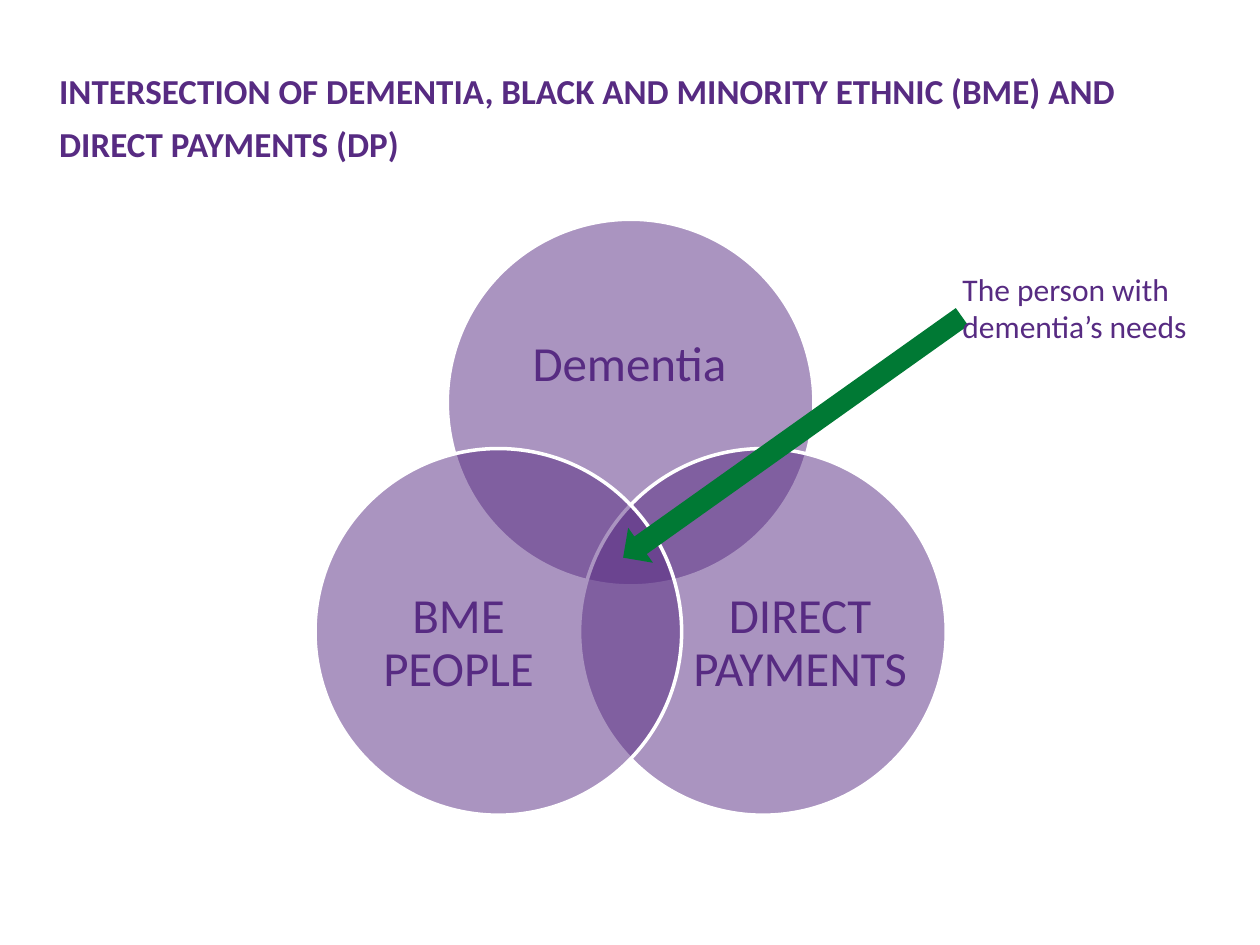
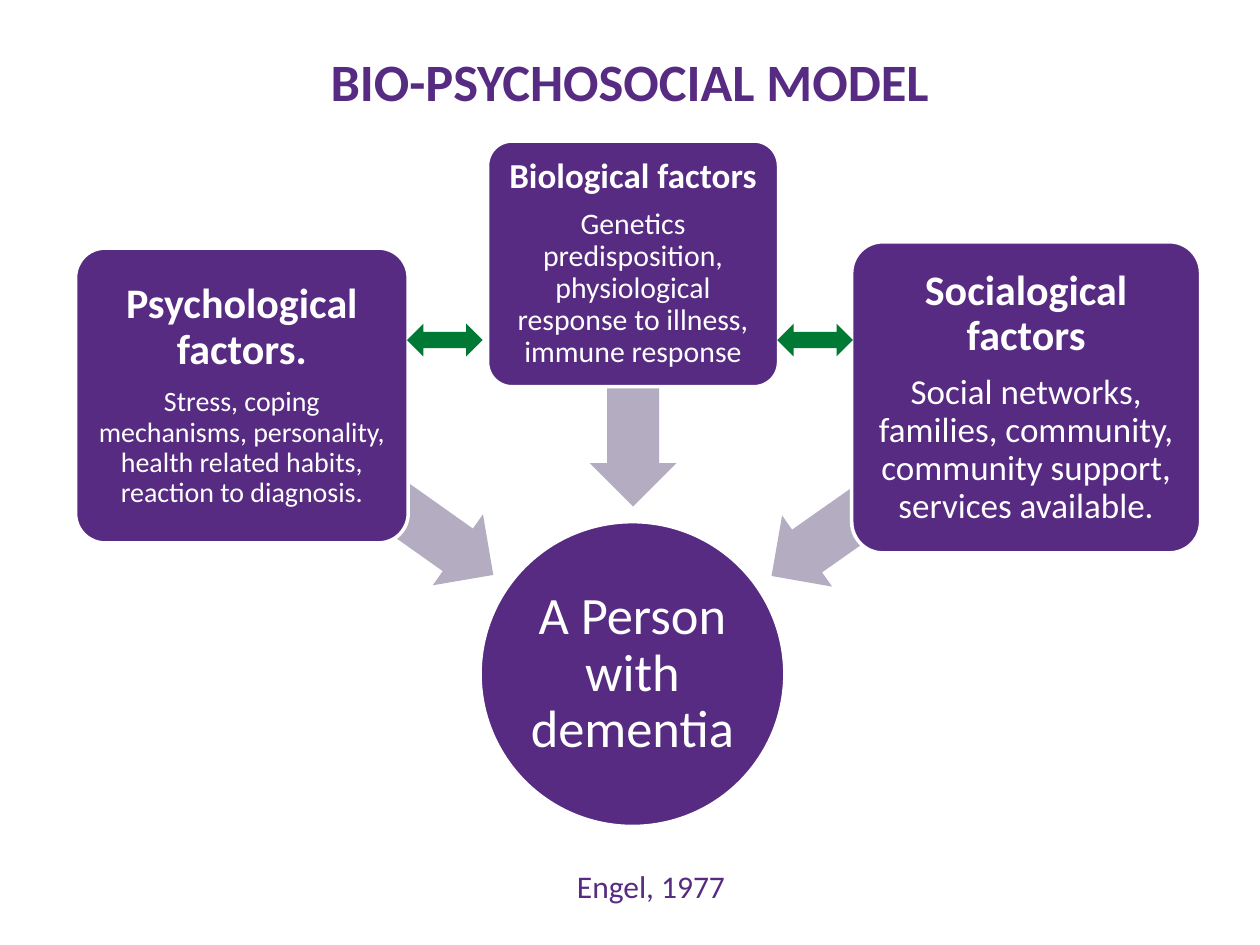
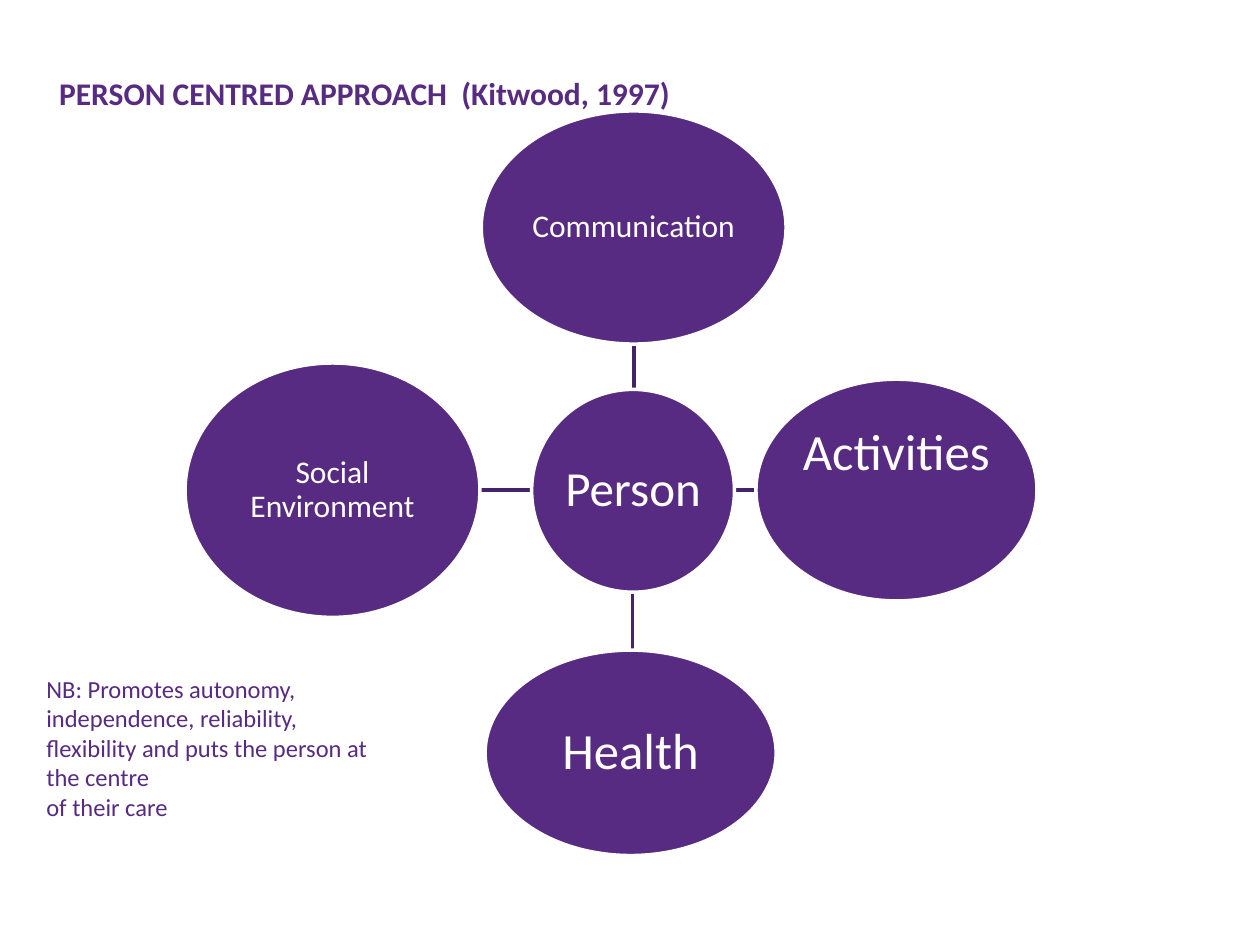
from lxml.etree import SubElement
from pptx import Presentation
from pptx.dml.color import RGBColor
from pptx.enum.shapes import MSO_CONNECTOR, MSO_SHAPE
from pptx.enum.text import MSO_ANCHOR, MSO_AUTO_SIZE, PP_ALIGN
from pptx.oxml.ns import qn
from pptx.util import Pt

PURPLE, DARK, GREEN, GREY, WHITE = "572B82", "462268", "007934", "B4ADC1", "FFFFFF"


def color(text):
    return RGBColor.from_string(text)


def assign(target, **values):
    for name, value in values.items():
        setattr(target, name, value)


class Deck:
    font = "Calibri"

    def __init__(self):
        self.prs = Presentation()
        assign(self.prs, slide_width=Pt(720), slide_height=Pt(540))
        self.slide = None

    def fill_text(self, frame, lines, hue, align=PP_ALIGN.LEFT, gap=0, space=1.0,
                  inset=(7.2, 3.6, 7.2, 3.6), anchor=MSO_ANCHOR.TOP):
        """Fill a frame with (text, size, bold) lines; gap is a share of the size."""
        sides = ("left", "top", "right", "bottom")
        margins = {f"margin_{s}": Pt(v) for s, v in zip(sides, inset)}
        assign(frame, auto_size=MSO_AUTO_SIZE.NONE, word_wrap=True,
               vertical_anchor=anchor, **margins)
        for i, (text, size, bold) in enumerate(lines):
            para = frame.add_paragraph() if i else frame.paragraphs[0]
            after = gap * size if i < len(lines) - 1 else 0
            assign(para, text=text, alignment=align, line_spacing=space,
                   space_before=Pt(0), space_after=Pt(after))
            assign(para.font, name=self.font, size=Pt(size), bold=bold)
            para.font.color.rgb = color(hue)

    def center(self, frame, lines, hue, inset):
        self.fill_text(frame, lines, hue, PP_ALIGN.CENTER, 0.35, 0.9, inset,
                       MSO_ANCHOR.MIDDLE)

    def title(self, text, size, high, align=PP_ALIGN.LEFT):
        self.slide = self.prs.slides.add_slide(self.prs.slide_layouts[5])
        head = self.slide.shapes.title
        assign(head, left=Pt(33.8), top=Pt(33.8), width=Pt(652.3), height=Pt(high))
        self.fill_text(head.text_frame, [(text, size, True)], hue=PURPLE, align=align,
                       space=Pt(30), inset=(0, 0, 0, 0))

    def box(self, rect):
        return self.slide.shapes.add_textbox(*map(Pt, rect)).text_frame

    def note(self, rect, size, *texts):
        self.fill_text(self.box(rect), [(t, size, False) for t in texts], PURPLE)

    def label(self, rect, text, size):
        self.center(self.box(rect), [(text, size, False)], PURPLE, (0, 0, 0, 0))

    def shape(self, kind, rect, fill, edge=None, turn=0, adjust=(), alpha=None):
        item = self.slide.shapes.add_shape(kind, *map(Pt, rect))
        item.shadow.inherit = False
        item.rotation = turn
        for i, value in enumerate(adjust):
            item.adjustments[i] = value
        item.fill.solid()
        item.fill.fore_color.rgb = color(fill)
        if edge:
            item.line.width = Pt(2)
            item.line.color.rgb = color(edge)
        else:
            item.line.fill.background()
        if alpha:
            tint = item._element.spPr.find(qn("a:solidFill"))[0]
            SubElement(tint, qn("a:alpha")).set("val", str(alpha * 1000))
        return item

    def node(self, kind, rect, lines, inset=(1.4,) * 4, adjust=()):
        item = self.shape(kind, rect, PURPLE, WHITE, adjust=adjust)
        self.center(item.text_frame, lines, WHITE, inset)

    def line(self, *ends):
        link = self.slide.shapes.add_connector(MSO_CONNECTOR.STRAIGHT, *map(Pt, ends))
        link.line.width = Pt(2)
        link.line.color.rgb = color(DARK)
        SubElement(link._element.spPr, qn("a:effectLst"))


def venn(deck):
    deck.title("INTERSECTION OF DEMENTIA, BLACK AND MINORITY ETHNIC (BME) "
               "AND DIRECT PAYMENTS (DP)", 20, 71.3)
    # Three overlapping circles
    size = 209.5
    for left, top, text, rect in (
        (255.6, 125.3, "Dementia", (283, 162, 153.4, 94.3)),
        (331.2, 256.3, "DIRECT PAYMENTS", (394.6, 310.3, 125.3, 115.2)),
        (180, 256.3, "BME PEOPLE", (199.4, 310.3, 125.3, 115.2)),
    ):
        deck.shape(MSO_SHAPE.OVAL, (left, top, size, size), PURPLE, WHITE, alpha=50)
        deck.label(rect, text, 28)
    # Pointer to the shared area
    deck.shape(MSO_SHAPE.LEFT_ARROW, (334.1, 237.6, 237.6, 24.5), GREEN, turn=324.6)
    deck.note((542.9, 150.5, 143.3, 51.1), 18, "The person with dementia’s needs")


def model(deck):
    deck.title("BIO-PSYCHOSOCIAL MODEL", 30, 48.2, PP_ALIGN.CENTER)
    deck.node(MSO_SHAPE.OVAL, (274.3, 298.1, 174.2, 174.2),
              [("A Person with dementia", 30, False)])
    # Arrows into the circle
    for left, top, wide, turn in ((121.7, 252.7, 176.4, 215.3),
                                  (292.3, 195.1, 139, 270),
                                  (424.8, 253.4, 177.1, 324.9)):
        deck.shape(MSO_SHAPE.LEFT_ARROW, (left, top, wide, 49.7), GREY,
                   turn=turn, adjust=(0.6, 0.5))
    # Factor cards
    for rect, inset, head, big, text, small in (
        ((43.2, 141.8, 190.1, 168.5), 3.6, "Psychological factors.", 24,
         "Stress, coping mechanisms, personality, health related habits, "
         "reaction to diagnosis.", 16),
        ((278.6, 80.6, 166.3, 140.4), 2.9, "Biological factors", 20,
         "Genetics predisposition, physiological response to illness, "
         "immune response", 17),
        ((486.7, 138.2, 199.4, 177.8), 3.6, "Socialogical factors", 24,
         "Social networks, families, community, community support, "
         "services available.", 20),
    ):
        deck.node(MSO_SHAPE.ROUNDED_RECTANGLE, rect,
                  [(head, big, True), (text, small, False)], (inset,) * 4, (0.1,))
    deck.note((322.6, 491.8, 113, 28.8), 18, "Engel, 1977")
    # Links between the cards
    for left in (232.6, 444.2):
        deck.shape(MSO_SHAPE.LEFT_RIGHT_ARROW, (left, 185, 43.2, 18.7), GREEN)


def person(deck):
    deck.title("PERSON CENTRED APPROACH  (Kitwood, 1997)", 18, 42.5)
    # Spokes
    for ends in ((362.2, 222.5, 362.2, 195.8), (419.8, 280.1, 432, 280.1),
                 (361.4, 337.7, 361.4, 371.5), (303.8, 280.1, 274.3, 280.1)):
        deck.line(*ends)
    # Hub and its four needs; the lower inset lifts the text
    for rect, text, size, low in (
        ((303.8, 222.5, 115.9, 115.9), "Person", 28, 1.4),
        ((275, 63.4, 174.2, 133.2), "Communication", 18, 1.4),
        ((432, 216.7, 160.6, 126.7), "Activities", 29, 42),
        ((277.2, 371.5, 166.3, 117.4), "Health", 29, 1.4),
        ((105.8, 207.4, 168.5, 145.4), "Social Environment", 18, 1.4),
    ):
        deck.node(MSO_SHAPE.OVAL, rect, [(text, size, False)], (1.4, 1.4, 1.4, low))
    deck.note((19.4, 381.6, 209.5, 92.2), 14,
              "NB: Promotes autonomy, independence, reliability, flexibility "
              "and puts the person at the centre", "of their care")


def main():
    deck = Deck()
    for build in (venn, model, person):
        build(deck)
    deck.prs.save("out.pptx")


if __name__ == "__main__":
    main()
